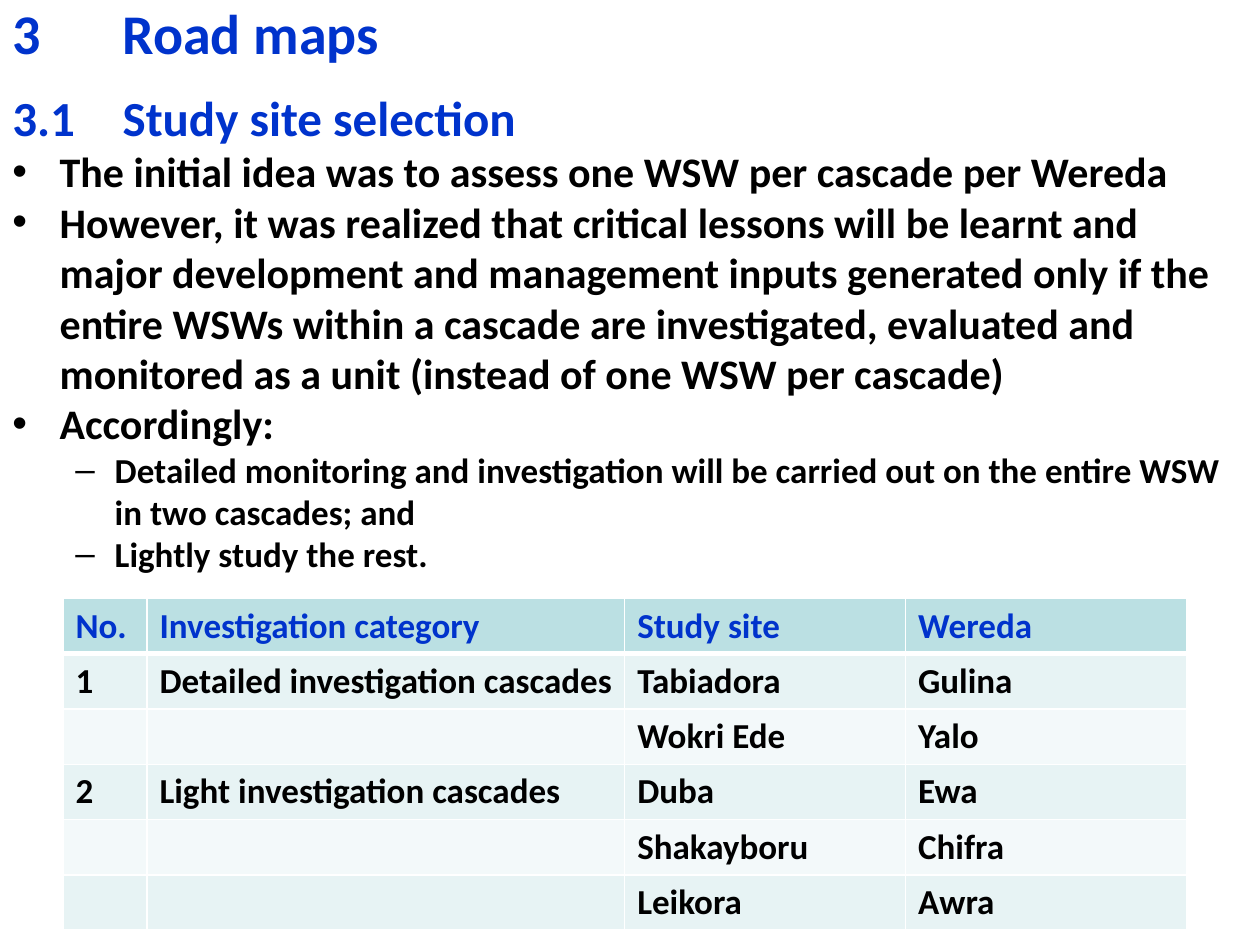
from dataclasses import dataclass

from lxml import etree
from pptx import Presentation
from pptx.dml.color import RGBColor
from pptx.oxml.ns import qn
from pptx.util import Pt


@dataclass(frozen=True)
class Theme:
    """Colours, font and type sizes of the slide."""
    font: str = "Calibri"
    heading: str = "0033CC"
    body: str = "000000"
    header_fill: str = "BBE0E3"
    bands: tuple = ("E7F3F4", "F3F9FA")
    border: str = "FFFFFF"
    title: int = 32
    subtitle: int = 28
    bullet: int = 24
    small: int = 20


THEME = Theme()
HEADINGS = [
    ("3\t\tRoad maps", THEME.title, 0, 6, 0.9),
    ("3.1\tStudy site selection", THEME.subtitle, 5.6, 0, 1.0),
]
BULLETS = [
    (0, "The initial idea was to assess one WSW per cascade per Wereda"),
    (0, "However, it was realized that critical lessons will be learnt and major "
        "development and management inputs generated only if the entire WSWs within "
        "a cascade are investigated, evaluated and monitored as a unit (instead of "
        "one WSW per cascade)"),
    (0, "Accordingly:"),
    (1, "Detailed monitoring and investigation will be carried out on the entire "
        "WSW in two cascades; and"),
    (1, "Lightly study the rest."),
]
LEVELS = [("•", 27, -27, THEME.bullet), ("–", 58.5, -22.5, THEME.small)]
SITES = [
    ("No.", "Investigation category", "Study site", "Wereda"),
    ("1", "Detailed investigation cascades", "Tabiadora", "Gulina"),
    ("", "", "Wokri Ede", "Yalo"),
    ("2", "Light investigation cascades", "Duba", "Ewa"),
    ("", "", "Shakayboru", "Chifra"),
    ("", "", "Leikora", "Awra"),
]
COLUMN_WIDTHS = (48, 273, 160.5, 160.5)


def add_run(p, text, size, color):
    """Add a bold run to a paragraph."""
    r = p.add_run()
    r.text = text
    r.font.name = THEME.font
    r.font.size = Pt(size)
    r.font.bold = True
    r.font.color.rgb = RGBColor.from_string(color)


def set_indent(p, left, first, bullet=None):
    """Set the hanging indent and, if given, the bullet of a paragraph."""
    pPr = p._p.get_or_add_pPr()
    pPr.set("marL", str(Pt(left)))
    pPr.set("indent", str(Pt(first)))
    if bullet:
        font = etree.SubElement(pPr, qn("a:buFont"))
        font.set("typeface", "Arial")
        etree.SubElement(pPr, qn("a:buChar")).set("char", bullet)


def set_borders(cell, top, bottom):
    """Draw the four borders of a cell."""
    tcPr = cell._tc.get_or_add_tcPr()
    for side, width in (("L", 1), ("R", 1), ("T", top), ("B", bottom)):
        ln = etree.SubElement(tcPr, qn(f"a:ln{side}"), w=str(Pt(width)))
        fill = etree.SubElement(ln, qn("a:solidFill"))
        etree.SubElement(fill, qn("a:srgbClr"), val=THEME.border)


def add_outline(s, left, top, width, height):
    """Place the headings and the bulleted text in one text box."""
    tf = s.shapes.add_textbox(Pt(left), Pt(top), Pt(width), Pt(height)).text_frame
    tf.word_wrap = True
    p = tf.paragraphs[0]
    for i, (text, size, before, after, spacing) in enumerate(HEADINGS):
        p = tf.add_paragraph() if i else p
        p.line_spacing = spacing
        p.space_before, p.space_after = Pt(before), Pt(after)
        set_indent(p, *LEVELS[0][1:3])
        add_run(p, text, size, THEME.heading)
    for level, text in BULLETS:
        bullet, indent, first, size = LEVELS[level]
        p = tf.add_paragraph()
        p.level = level
        p.space_before = Pt(0)
        set_indent(p, indent, first, bullet)
        add_run(p, text, size, THEME.body)


def add_site_table(s, left, top, width, height):
    """Place the table of study sites."""
    table = s.shapes.add_table(len(SITES), len(COLUMN_WIDTHS), Pt(left), Pt(top),
                               Pt(width), Pt(height)).table
    for column, share in zip(table.columns, COLUMN_WIDTHS):
        column.width = Pt(width * share / sum(COLUMN_WIDTHS))
    for i, row in enumerate(SITES):
        table.rows[i].height = Pt(height / len(SITES))
        fill = THEME.bands[(i - 1) % 2] if i else THEME.header_fill
        color = THEME.body if i else THEME.heading
        for j, text in enumerate(row):
            cell = table.cell(i, j)
            set_borders(cell, 3 if i == 1 else 1, 1 if i else 3)
            cell.fill.solid()
            cell.fill.fore_color.rgb = RGBColor.from_string(fill)
            if text:
                add_run(cell.text_frame.paragraphs[0], text, THEME.small, color)


def main():
    """Build and save the slide."""
    prs = Presentation()
    prs.slide_width, prs.slide_height = Pt(720), Pt(540)
    s = prs.slides.add_slide(prs.slide_layouts[6])
    add_outline(s, 0, 0, 720, 540)
    add_site_table(s, 36, 342, 642, 189.6)
    prs.save("out.pptx")


if __name__ == "__main__":
    main()
